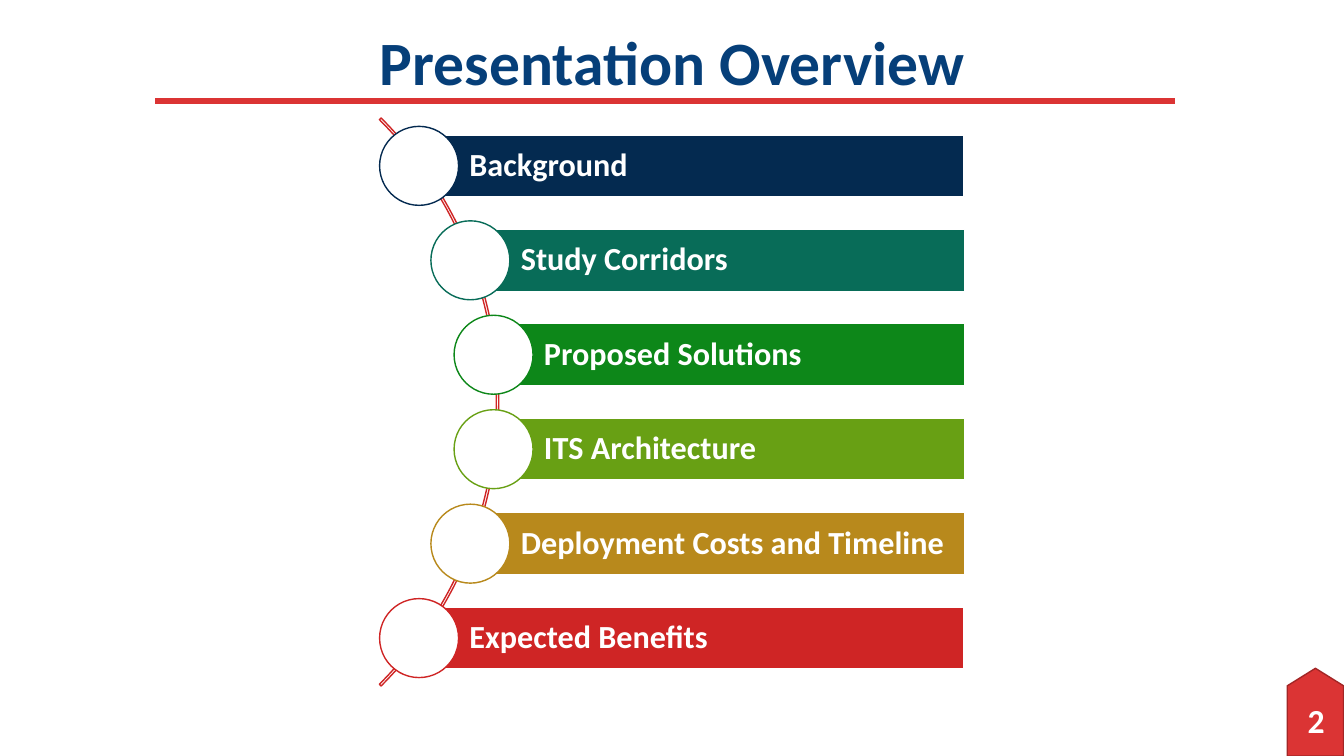
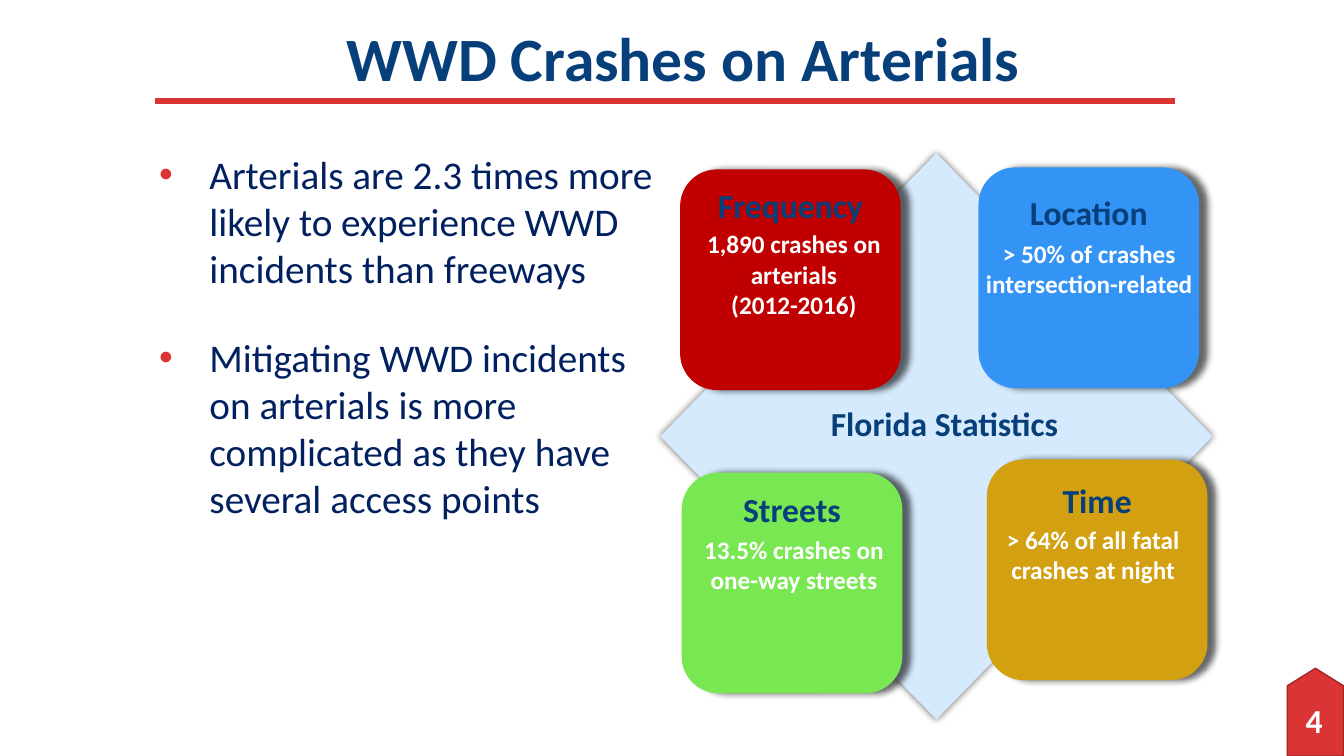
from dataclasses import dataclass
from math import sqrt

from lxml import etree
from pptx import Presentation
from pptx.dml.color import RGBColor
from pptx.enum.shapes import MSO_CONNECTOR, MSO_SHAPE as Preset
from pptx.enum.text import MSO_ANCHOR as Anchor, PP_ALIGN as Align
from pptx.oxml.ns import qn
from pptx.util import Cm, Pt


@dataclass(frozen=True)
class Theme:
    font: str = "Calibri"
    white: str = "FFFFFF"
    navy: str = "063F79"
    ink: str = "002060"
    red: str = "DB3434"
    dark_red: str = "A22626"
    arc_red: str = "CF2525"
    pale_blue: str = "D6EAFD"
    title: int = 44
    body: int = 28
    heading: int = 24
    ribbon: int = 23
    detail: int = 18


theme = Theme()


def write(frame, lines, size, color, bold=True, align=Align.CENTER, anchor=Anchor.TOP):
    """Fill a text frame with one paragraph per line."""
    frame.word_wrap = True
    frame.vertical_anchor = anchor
    frame.text = "\n".join(lines)
    for paragraph in frame.paragraphs:
        paragraph.alignment = align
        for run in paragraph.runs:
            run.font.name = theme.font
            run.font.size = Pt(size)
            run.font.bold = bold
            run.font.color.rgb = RGBColor.from_string(color)


def paint(shape, fill=None, line=None, shadow=None):
    """Set fill and outline; shadow is the offset in points of a soft shadow."""
    if fill:
        shape.fill.solid()
        shape.fill.fore_color.rgb = RGBColor.from_string(fill)
    else:
        shape.fill.background()
    if line:
        shape.line.color.rgb = RGBColor.from_string(line)
        shape.line.width = Pt(1)
    else:
        shape.line.fill.background()
    shape.shadow.inherit = False
    if shadow is not None:
        effects = shape._element.spPr.find(qn("a:effectLst"))
        outer = etree.SubElement(effects, qn("a:outerShdw"), blurRad=str(Pt(5)),
                                 dist=str(Pt(shadow)), dir="0", rotWithShape="0")
        black = etree.SubElement(outer, qn("a:srgbClr"), val="000000")
        etree.SubElement(black, qn("a:alpha"), val="60000")


deck = Presentation()
deck.slide_width, deck.slide_height = Cm(33.87), Cm(19.05)
title_only = deck.slide_layouts[5]

# Shared frame: title, rule and page tag
pages = [
    ("Presentation Overview", 2.34, 0, "2", 33.17),
    ("WWD Crashes on Arterials", 2.62, -0.1, "4", 33.12),
]
slides = []
for heading, left, top, number, number_center in pages:
    slide = deck.slides.add_slide(title_only)
    slides.append(slide)

    title = slide.shapes.title
    title.left, title.top, title.width, title.height = Cm(left), Cm(top), Cm(29.21), Cm(3.28)
    write(title.text_frame, [heading], theme.title, theme.navy, anchor=Anchor.MIDDLE)
    title.text_frame.paragraphs[0].line_spacing = 0.9

    rule = slide.shapes.add_connector(MSO_CONNECTOR.STRAIGHT, Cm(3.91), Cm(2.54), Cm(29.62), Cm(2.54))
    rule.line.color.rgb = RGBColor.from_string(theme.red)
    rule.line.width = Pt(4.5)
    etree.SubElement(rule._element.spPr, qn("a:effectLst"))

    tag = slide.shapes.add_shape(Preset.FLOWCHART_OFFPAGE_CONNECTOR,
                                 Cm(32.44), Cm(16.84), Cm(1.42), Cm(2.21))
    tag.rotation = 180
    paint(tag, theme.red, theme.dark_red)
    page_number = slide.shapes.add_textbox(Cm(number_center - 0.7), Cm(17.64), Cm(1.4), Cm(1.02))
    write(page_number.text_frame, [number], theme.heading, theme.white, anchor=Anchor.MIDDLE)

overview, arterials = slides

# Overview: topics strung along an arc
arc_x, arc_y, arc_size = 2.45, 10.13, 20.24
orbit, topic_step = 10.06, 2.38
ribbon_right, ribbon_height, bead_size = 24.3, 1.56, 1.99

arc = overview.shapes.add_shape(Preset.BLOCK_ARC, Cm(arc_x - arc_size / 2), Cm(arc_y - arc_size / 2),
                                Cm(arc_size), Cm(arc_size))
for index, value in enumerate((189, 27, 0.003)):
    arc.adjustments[index] = value
paint(arc, line=theme.arc_red)

topics = [
    ("Background", "042A50"),
    ("Study Corridors", "086C58"),
    ("Proposed Solutions", "0D8719"),
    ("ITS Architecture", "68A014"),
    ("Deployment Costs and Timeline", "B8891C"),
    ("Expected Benefits", "CF2525"),
]
for index, (topic, color) in enumerate(topics):
    offset = (index - (len(topics) - 1) / 2) * topic_step
    x, y = arc_x + sqrt(orbit ** 2 - offset ** 2), arc_y + offset

    ribbon = overview.shapes.add_shape(Preset.RECTANGLE, Cm(x), Cm(y - ribbon_height / 2),
                                       Cm(ribbon_right - x), Cm(ribbon_height))
    paint(ribbon, color, theme.white)
    write(ribbon.text_frame, [topic], theme.ribbon, theme.white, align=Align.LEFT, anchor=Anchor.MIDDLE)
    ribbon.text_frame.margin_left = Cm(1.27)
    ribbon.text_frame.margin_right = Cm(0.15)
    ribbon.text_frame.paragraphs[0].line_spacing = 0.9

    bead = overview.shapes.add_shape(Preset.OVAL, Cm(x - bead_size / 2), Cm(y - bead_size / 2),
                                     Cm(bead_size), Cm(bead_size))
    paint(bead, theme.white, color)

# Arterials: bulleted findings
findings = arterials.shapes.add_textbox(Cm(3.76), Cm(3.66), Cm(13.34), Cm(9.7))
write(findings.text_frame, [
    "Arterials are 2.3 times more likely to experience WWD incidents than freeways",
    "Mitigating WWD incidents on arterials is more complicated as they have several access points",
], theme.body, theme.ink, bold=False, align=Align.LEFT)
for paragraph in findings.text_frame.paragraphs:
    properties = paragraph._p.get_or_add_pPr()
    properties.set("marL", str(Cm(1.27)))
    properties.set("indent", str(-Cm(1.27)))
    bullet_color = etree.SubElement(properties, qn("a:buClr"))
    etree.SubElement(bullet_color, qn("a:srgbClr"), val=theme.red)
    etree.SubElement(properties, qn("a:buFont"), typeface="Arial")
    etree.SubElement(properties, qn("a:buChar"), char="•")
findings.text_frame.paragraphs[0].space_after = Pt(30)

# Arterials: statistics diamond with four cards
diamond = arterials.shapes.add_shape(Preset.DIAMOND, Cm(16.64), Cm(3.86), Cm(13.92), Cm(14.27))
paint(diamond, theme.pale_blue, shadow=0)

card_size, detail_width = 5.56, 5.97
# heading, fill, card left and top, heading inset, detail centre and top, detail lines
cards = [
    ("Frequency", "C00000", 17.14, 4.27, 0.11, 20.01, 5.64, ["1,890 crashes on arterials", "(2012-2016)"]),
    ("Location", "3494F5", 24.66, 4.22, 0.34, 27.45, 5.87, ["> 50% of crashes intersection-related"]),
    ("Streets", "79E751", 17.18, 11.91, 0.13, 20.01, 13.34, ["13.5% crashes on one-way streets"]),
    ("Time", "D2A010", 24.87, 11.58, 0.24, 27.55, 13.08, ["> 64% of all fatal crashes at night"]),
]
for heading, color, left, top, inset, center, detail_top, lines in cards:
    card = arterials.shapes.add_shape(Preset.ROUNDED_RECTANGLE, Cm(left), Cm(top),
                                      Cm(card_size), Cm(card_size))
    paint(card, color, shadow=6)
    write(card.text_frame, [heading], theme.heading, theme.navy)
    card.text_frame.margin_top = Cm(inset)

    detail = arterials.shapes.add_textbox(Cm(center - detail_width / 2), Cm(detail_top),
                                          Cm(detail_width), Cm(2.56))
    write(detail.text_frame, lines, theme.detail, theme.white)

caption = arterials.shapes.add_textbox(Cm(18.52), Cm(10.03), Cm(10.57), Cm(1.27))
write(caption.text_frame, ["Florida Statistics"], theme.heading, theme.navy)

deck.save("out.pptx")
